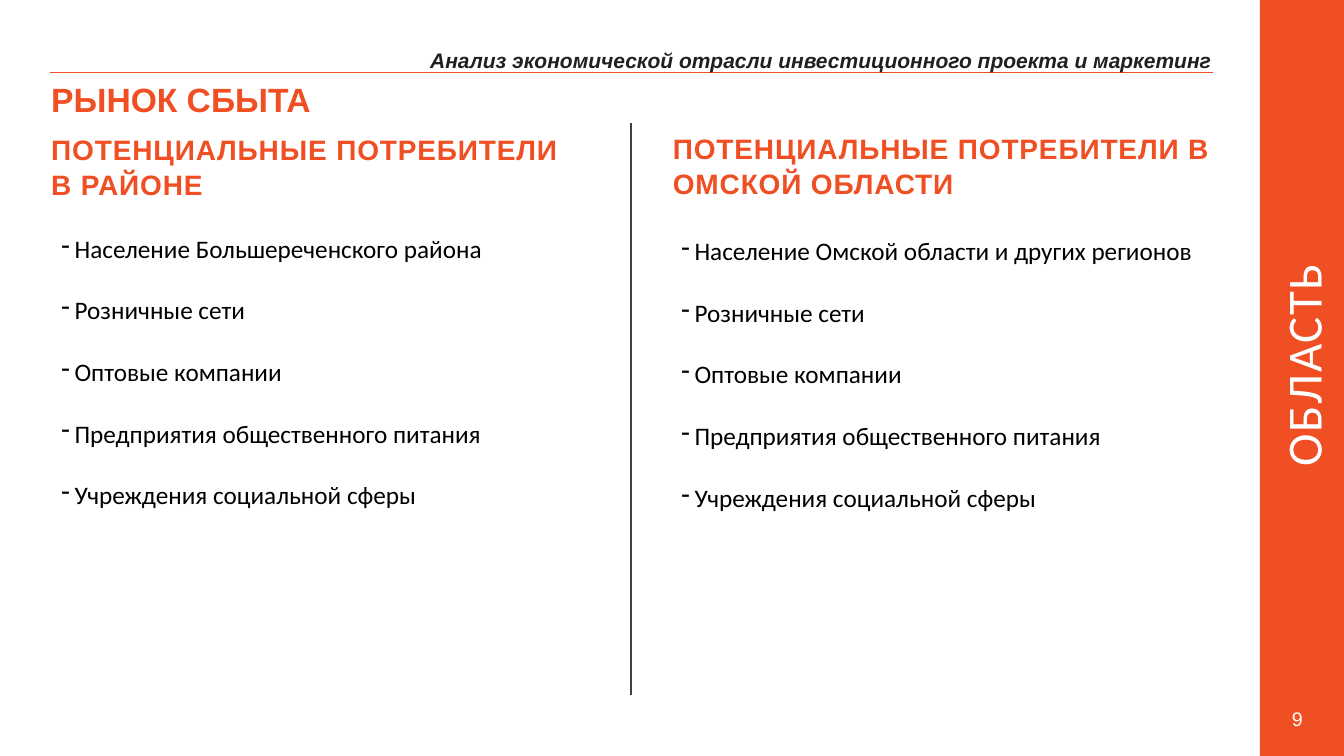
"""Build the sales market slide: two columns of potential consumers beside an orange sidebar."""
from lxml.etree import SubElement
from pptx import Presentation
from pptx.dml.color import RGBColor
from pptx.enum.shapes import MSO_CONNECTOR as Connector, MSO_SHAPE as Shape
from pptx.enum.text import MSO_ANCHOR as Anchor, PP_ALIGN as Align
from pptx.oxml.ns import qn
from pptx.util import Inches, Pt

ORANGE, WHITE, BLACK, INK, GREY = "F04E23", "FFFFFF", "000000", "231F20", "404040"

presentation = Presentation()
presentation.slide_width, presentation.slide_height = Inches(13.33), Inches(7.5)
slide = presentation.slides.add_slide(presentation.slide_layouts[6])
column, row = presentation.slide_width / 160, presentation.slide_height / 90


def paint(target, color):
    target.rgb = RGBColor.from_string(color)


def add_text(left, top, width, height, lines, size, color, name="Arial",
             bold=False, italic=False, spacing=0, gap=1, bullet=None):
    box = slide.shapes.add_textbox(int(left * column), int(top * row),
                                   int(width * column), int(height * row))
    frame = box.text_frame
    frame.word_wrap = True
    frame.margin_left = frame.margin_top = frame.margin_right = frame.margin_bottom = 0
    for index, line in enumerate(lines):
        paragraph = frame.paragraphs[0] if index == 0 else frame.add_paragraph()
        run = paragraph.add_run()
        run.text = line
        if spacing:
            run.font._element.set("spc", str(spacing))
        if index:
            paragraph.space_before = Pt(gap)
        if bullet:
            paragraph.line_spacing = Pt(20)
            properties = paragraph._p.get_or_add_pPr()
            properties.set("marL", str(Inches(0.14)))
            properties.set("indent", str(-Inches(0.13)))
            SubElement(properties, qn("a:buChar"), char=bullet)
        font = paragraph.font
        font.size, font.name, font.bold, font.italic = Pt(size), name, bold, italic
        paint(font.color, color)
    return box


sidebar = slide.shapes.add_shape(Shape.RECTANGLE, int(150 * column), 0,
                                 int(10 * column), presentation.slide_height)
sidebar.shadow.inherit = False
sidebar.fill.solid()
paint(sidebar.fill.fore_color, ORANGE)
sidebar.line.fill.background()

region = add_text(139, 38.7, 32, 9.6, ["ОБЛАСТЬ"], 35, WHITE, "Calibri", spacing=130)
region.rotation = 270
region.text_frame.vertical_anchor = Anchor.MIDDLE
region.text_frame.paragraphs[0].alignment = Align.CENTER

for start_x, start_y, end_x, end_y, color, weight in [
    (6, 8.64, 144.4, 8.64, ORANGE, 0.5),
    (75.12, 14.64, 75.12, 82.7, GREY, 0.75),
]:
    rule = slide.shapes.add_connector(Connector.STRAIGHT, int(start_x * column), int(start_y * row),
                                      int(end_x * column), int(end_y * row))
    paint(rule.line.color, color)
    rule.line.width = Pt(weight)
    SubElement(rule._element.spPr, qn("a:effectLst"))

add_text(51.2, 5.64, 95, 3.2,
         ["Анализ экономической отрасли инвестиционного проекта и маркетинг"],
         15, INK, bold=True, italic=True)
add_text(6.1, 9.36, 141, 4.8, ["РЫНОК СБЫТА"], 24, ORANGE, bold=True)
add_text(153.8, 84.1, 2.5, 3.2, ["9"], 14, WHITE)

shared_consumers = ["Розничные сети", "Оптовые компании",
                    "Предприятия общественного питания", "Учреждения социальной сферы"]
for heading_left, heading_top, heading, list_left, list_top, population in [
    (6.1, 15.72, ["ПОТЕНЦИАЛЬНЫЕ ПОТРЕБИТЕЛИ", "В РАЙОНЕ"],
     7.2, 28, "Население Большереченского района"),
    (80.1, 15.6, ["ПОТЕНЦИАЛЬНЫЕ ПОТРЕБИТЕЛИ В", "ОМСКОЙ ОБЛАСТИ"],
     81, 28.3, "Население Омской области и других регионов"),
]:
    add_text(heading_left, heading_top, 69, 8.4, heading, 20, ORANGE, bold=True, spacing=60)
    add_text(list_left, list_top, 63.4, 34, [population, *shared_consumers],
             18, BLACK, "Calibri", gap=24, bullet="-")

presentation.save("out.pptx")
